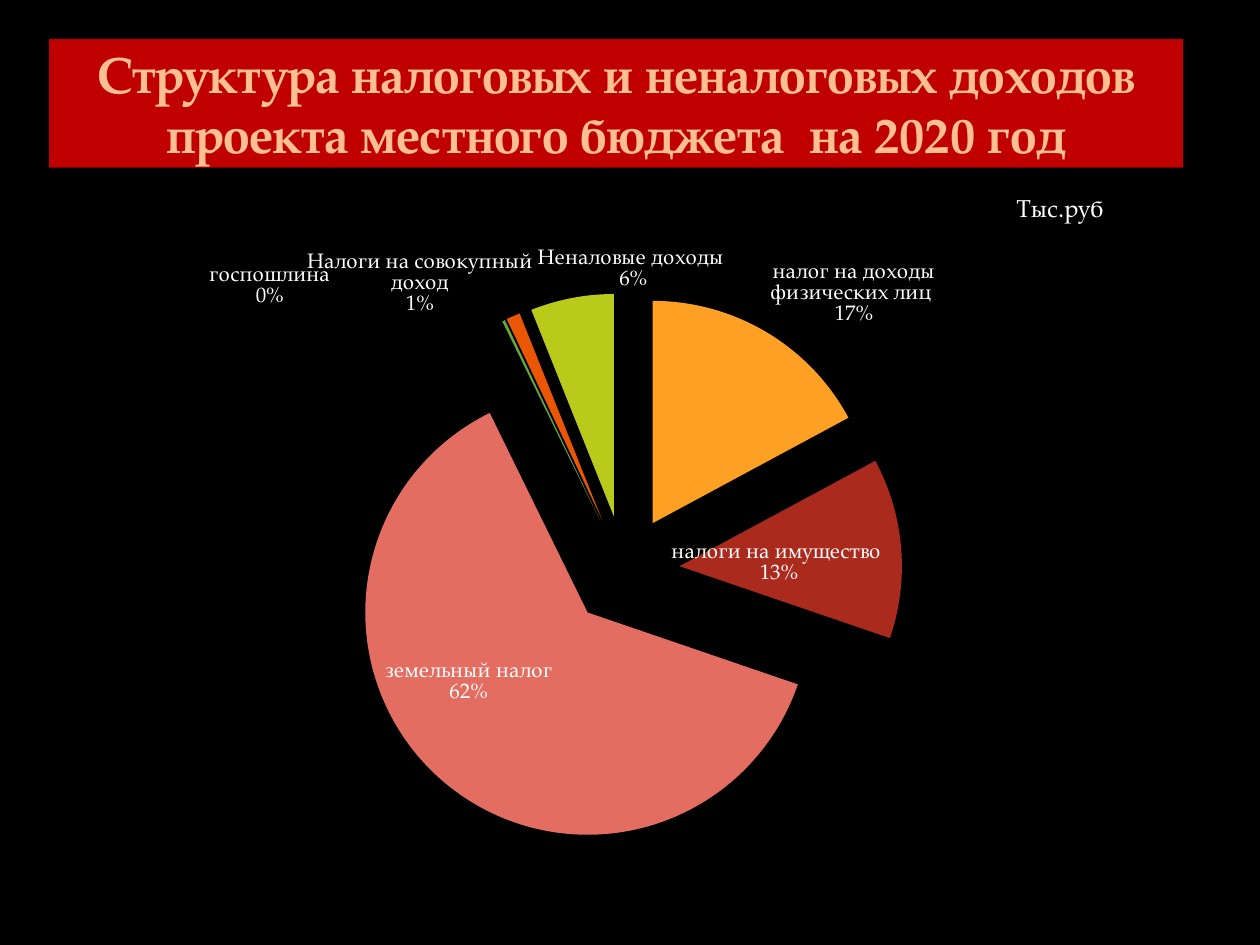
import lxml.etree
import pptx
import pptx.chart.data
import pptx.dml.color
import pptx.enum.chart
import pptx.enum.text
import pptx.oxml
import pptx.oxml.ns
import pptx.util

Inches = pptx.util.Inches
Position = pptx.enum.chart.XL_LABEL_POSITION
FONT = "TeX Gyre Pagella"
WHITE = "FFFFFF"

# Category, share in percent, colour, label position, label shift (share of chart size)
# The state duty share rounds to 0%, but stays above zero so that its slice is drawn.
REVENUES = [
    ("налог на доходы физических лиц ", 17, "FDA023", Position.OUTSIDE_END, None),
    ("налоги на имущество ", 13, "AA2B1E", Position.CENTER, (-0.01, 0.01)),
    ("земельный налог", 62, "E36D61", Position.CENTER, (-0.04, -0.02)),
    ("госпошлина", 0.2, "64A73B", Position.OUTSIDE_END, (-0.15, -0.01)),
    ("Налоги на совокупный доход", 1, "EB5605", Position.BEST_FIT, (0.02, 0.01)),
    ("Неналовые доходы ", 6, "B9CA1A", Position.OUTSIDE_END, (0.14, 0)),
]


def paint(fill, color):
    fill.solid()
    fill.fore_color.rgb = pptx.dml.color.RGBColor.from_string(color)


def style_font(font, size, color, bold=False):
    font.name = FONT
    font.size = pptx.util.Pt(size)
    font.bold = bold
    paint(font.fill, color)


def add_run(paragraph, text, size, color, bold=False):
    run = paragraph.add_run()
    run.text = text
    style_font(run.font, size, color, bold)


def manual_layout(**settings):
    """Return a c:layout element with the given c:manualLayout settings."""
    layout = pptx.oxml.parse_xml(f"<c:layout {pptx.oxml.ns.nsdecls('c')}/>")
    manual = lxml.etree.SubElement(layout, pptx.oxml.ns.qn("c:manualLayout"))
    for name, value in settings.items():
        lxml.etree.SubElement(manual, pptx.oxml.ns.qn(f"c:{name}")).set("val", str(value))
    return layout


def place_plot(chart, left, top, width, height):
    plot_area = chart.plots[0]._element.getparent()
    for old_layout in plot_area.findall(pptx.oxml.ns.qn("c:layout")):
        plot_area.remove(old_layout)
    plot_area.insert(0, manual_layout(
        layoutTarget="inner", xMode="edge", yMode="edge",
        x=left, y=top, w=width, h=height))


def explode(series, percent):
    explosion = pptx.oxml.parse_xml(
        f'<c:explosion {pptx.oxml.ns.nsdecls("c")} val="{percent}"/>')
    series.format.fill.solid()
    series._element.find(pptx.oxml.ns.qn("c:spPr")).addnext(explosion)


def show_share(labels):
    """Show category and share on two lines; return the separator element."""
    labels.show_category_name = True
    labels.show_value = True
    labels.number_format = '0"%"'
    labels.number_format_is_linked = False
    style_font(labels.font, 12, WHITE)
    separator = pptx.oxml.parse_xml(
        f"<c:separator {pptx.oxml.ns.nsdecls('c')}>\n</c:separator>")
    labels._element.find(pptx.oxml.ns.qn("c:showBubbleSize")).addnext(separator)
    return separator


def place_label(point, position, shift, separator):
    label = point.data_label
    style_font(label.font, 12, WHITE)
    label.position = position
    element = label._dLbl
    for name, shown in (("showLegendKey", 0), ("showVal", 1),
                        ("showCatName", 1), ("showPercent", 0)):
        element.find(pptx.oxml.ns.qn(f"c:{name}")).set("val", str(shown))
    number_format = pptx.oxml.parse_xml(
        f"<c:numFmt {pptx.oxml.ns.nsdecls('c')} formatCode='0\"%\"' sourceLinked='0'/>")
    element.find(pptx.oxml.ns.qn("c:spPr")).addprevious(number_format)
    element.append(pptx.oxml.parse_xml(lxml.etree.tostring(separator)))
    if shift:
        element.find(pptx.oxml.ns.qn("c:idx")).addnext(
            manual_layout(x=shift[0], y=shift[1]))


def add_title(slide, text):
    title = slide.shapes.title
    title.left, title.top = Inches(0.39), Inches(0.31)
    title.width, title.height = Inches(9), Inches(1.02)
    paint(title.fill, "C00000")
    frame = title.text_frame
    frame.auto_size = pptx.enum.text.MSO_AUTO_SIZE.NONE
    frame.vertical_anchor = pptx.enum.text.MSO_ANCHOR.MIDDLE
    frame.paragraphs[0].alignment = pptx.enum.text.PP_ALIGN.CENTER
    add_run(frame.paragraphs[0], text, 28.8, "FFC091", bold=True)


def add_unit_note(slide, text):
    note = slide.shapes.add_textbox(Inches(7.97), Inches(1.48), Inches(1.33), Inches(0.34))
    note.text_frame.word_wrap = True
    note.text_frame.auto_size = pptx.enum.text.MSO_AUTO_SIZE.SHAPE_TO_FIT_TEXT
    add_run(note.text_frame.paragraphs[0], text, 14, WHITE)


def add_revenue_pie(slide):
    shares = pptx.chart.data.CategoryChartData()
    shares.categories = [revenue[0] for revenue in REVENUES]
    shares.add_series("Series 1", [revenue[1] for revenue in REVENUES])
    chart = slide.shapes.add_chart(
        pptx.enum.chart.XL_CHART_TYPE.PIE,
        Inches(0.5), Inches(1.75), Inches(9), Inches(5.15), shares).chart
    chart.has_title = False
    chart.has_legend = False
    style_font(chart.font, 18, WHITE)
    place_plot(chart, 0.25, 0.11, 0.49, 0.86)

    pie = chart.plots[0]
    pie.vary_by_categories = True
    series = pie.series[0]
    explode(series, 25)
    separator = show_share(series.data_labels)
    for index, (_, _, color, position, shift) in enumerate(REVENUES):
        point = series.points[index]
        paint(point.format.fill, color)
        place_label(point, position, shift, separator)


def main():
    presentation = pptx.Presentation()
    presentation.slide_width, presentation.slide_height = Inches(10), Inches(7.5)
    slide = presentation.slides.add_slide(presentation.slide_layouts[5])
    paint(slide.background.fill, "000000")
    add_title(slide, "Структура налоговых и неналоговых доходов "
                     "проекта местного бюджета  на 2020 год")
    add_revenue_pie(slide)
    add_unit_note(slide, "Тыс.руб")
    presentation.save("out.pptx")


if __name__ == "__main__":
    main()
